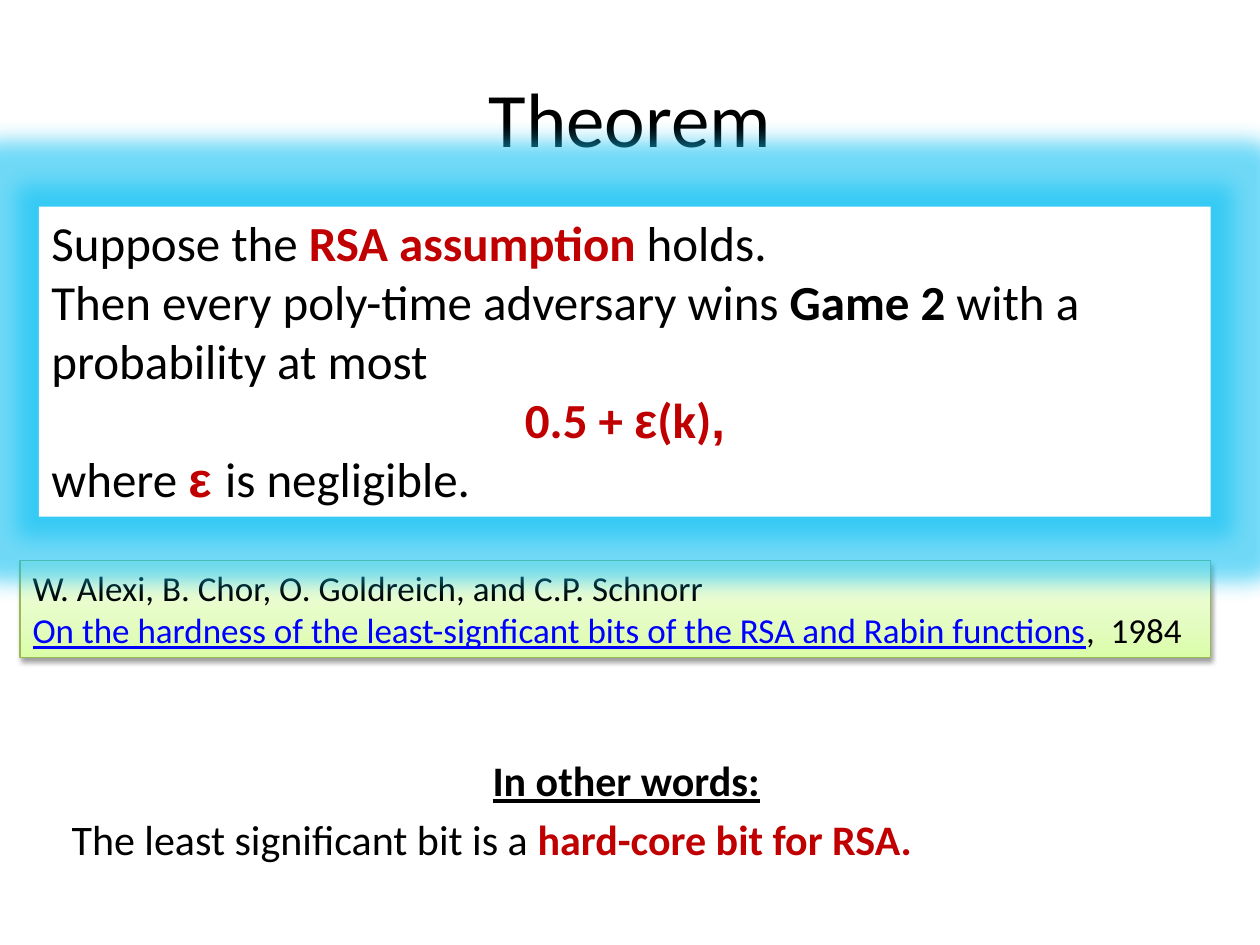
from dataclasses import dataclass

from lxml import etree
from pptx import Presentation
from pptx import util as u
from pptx.dml.color import RGBColor
from pptx.enum import shapes, text
from pptx.oxml import parse_xml
from pptx.oxml.ns import nsdecls

COLS, ROWS = 100, 75
CENTER = text.PP_ALIGN.CENTER
LEFT = text.PP_ALIGN.LEFT


@dataclass(frozen=True)
class Theme:
    font: str = "Calibri"
    symbol_font: str = "Arial"
    ink: str = "000000"
    accent: str = "C00000"
    link: str = "0000FF"
    paper: str = "FFFFFF"
    glow: str = "11C1F3"
    border: str = "98B955"
    greens: tuple = ((0, "DAFDA7"), (35, "E4FCC2"), (100, "F5FFE7"))
    title: int = 44
    statement: int = 28
    summary: int = 24
    citation: int = 20


THEME = Theme()


@dataclass(frozen=True)
class Run:
    text: str
    color: str = THEME.ink
    bold: bool = False
    underline: bool = False
    font: str = THEME.font


@dataclass(frozen=True)
class Para:
    runs: tuple
    align: text.PP_ALIGN = LEFT


@dataclass(frozen=True)
class Block:
    col: float
    row: float
    cols: float
    rows: float
    size: int
    paras: tuple
    anchor: text.MSO_ANCHOR = text.MSO_ANCHOR.TOP
    space_before: float = 0
    hanging: float = 0


def strong(words: str, font: str = THEME.font) -> Run:
    return Run(words, THEME.accent, bold=True, font=font)


TITLE = Block(5, 3, 90, 12.5, THEME.title, (Para((Run("Theorem"),), CENTER),),
              anchor=text.MSO_ANCHOR.MIDDLE)

SUMMARY = Block(4.7, 59.4, 90, 7.8, THEME.summary, (
    Para((Run("In other words:", bold=True, underline=True),), CENTER),
    Para((Run("The least significant bit is a "), strong("hard-core bit for RSA."))),
), space_before=0.2, hanging=0.38)

CITATION = Block(1.6, 44.5, 94.5, 7.7, THEME.citation, (
    Para((
        Run("W. Alexi, B. Chor, O. Goldreich, and C.P. Schnorr\n"),
        Run("On the hardness of the least-signficant bits of the RSA and Rabin functions",
            THEME.link, underline=True),
        Run(",  1984"),
    )),
))

STATEMENT = Block(3.1, 16.4, 93, 24.6, THEME.statement, (
    Para((Run("Suppose the "), strong("RSA assumption"), Run(" holds."))),
    Para((Run("Then every poly-time adversary wins "), Run("Game 2", bold=True),
          Run(" with a probability at most"))),
    Para((strong("0.5 + "), strong("ε", THEME.symbol_font), strong("(k)"),
          strong(",", THEME.symbol_font)), CENTER),
    Para((Run("where "), strong("ε ", THEME.symbol_font), Run("is negligible."))),
))


def add_run(p, run: Run, size: int) -> None:
    for i, line in enumerate(run.text.split("\n")):
        if i:
            p.add_line_break()
        if not line:
            continue
        r = p.add_run()
        r.text = line
        r.font.name = run.font
        r.font.size = u.Pt(size)
        r.font.bold = run.bold
        r.font.underline = run.underline
        r.font.color.rgb = RGBColor.from_string(run.color)


def fill_text(sp, block: Block) -> None:
    tf = sp.text_frame
    tf.word_wrap = True
    tf.vertical_anchor = block.anchor
    for i, para in enumerate(block.paras):
        p = tf.paragraphs[0] if i == 0 else tf.add_paragraph()
        p.alignment = para.align
        if block.space_before:
            p.space_before = u.Pt(block.space_before * block.size)
        if block.hanging:
            indent = u.Inches(block.hanging)
            pPr = p._p.get_or_add_pPr()
            pPr.set("marL", str(indent))
            pPr.set("indent", str(-indent))
        for run in para.runs:
            add_run(p, run, block.size)


def place(prs, block: Block) -> tuple:
    dx, dy = prs.slide_width / COLS, prs.slide_height / ROWS
    return tuple(round(v) for v in (block.col * dx, block.row * dy,
                                    block.cols * dx, block.rows * dy))


def add_text(prs, s, block: Block):
    sp = s.shapes.add_textbox(*place(prs, block))
    fill_text(sp, block)
    return sp


def add_panel(prs, s, block: Block):
    sp = s.shapes.add_shape(shapes.MSO_SHAPE.RECTANGLE, *place(prs, block))
    sp.shadow.inherit = False
    sp.fill.solid()
    sp.fill.fore_color.rgb = RGBColor.from_string(THEME.paper)
    sp.line.fill.background()
    fill_text(sp, block)
    return sp


def add_effect(sp, tag: str, color: str, alpha: int, **attrs) -> None:
    effects = sp._element.spPr.find("{*}effectLst")
    effect = parse_xml(
        f'<a:{tag} {nsdecls("a")}><a:srgbClr val="{color}">'
        f'<a:alpha val="{alpha * 1000}"/></a:srgbClr></a:{tag}>')
    for name, value in attrs.items():
        effect.set(name, str(value))
    effects.append(effect)


def set_gradient(sp, stops: tuple, angle: int) -> None:
    sp.fill.gradient()
    grad = sp._element.spPr.find("{*}gradFill")
    gs_list = grad.find("{*}gsLst")
    for gs in list(gs_list):
        gs_list.remove(gs)
    for pos, color in stops:
        gs = etree.SubElement(gs_list, gs_list.tag.replace("gsLst", "gs"), pos=str(pos * 1000))
        etree.SubElement(gs, gs.tag.replace("}gs", "}srgbClr"), val=color)
    sp.fill.gradient_angle = angle


def main() -> None:
    prs = Presentation()
    prs.slide_width, prs.slide_height = u.Inches(10), u.Inches(7.5)
    s = prs.slides.add_slide(prs.slide_layouts[6])

    add_text(prs, s, TITLE)
    add_text(prs, s, SUMMARY)

    citation = add_panel(prs, s, CITATION)
    set_gradient(citation, THEME.greens, 90)
    citation.line.color.rgb = RGBColor.from_string(THEME.border)
    citation.line.width = u.Pt(0.75)
    add_effect(citation, "outerShdw", THEME.ink, 38, blurRad=u.Pt(3.1), dist=u.Pt(1.6),
               dir=90 * 60000, rotWithShape=0)

    statement = add_panel(prs, s, STATEMENT)
    add_effect(statement, "glow", THEME.glow, 60, rad=u.Inches(0.35))

    prs.save("out.pptx")


if __name__ == "__main__":
    main()
